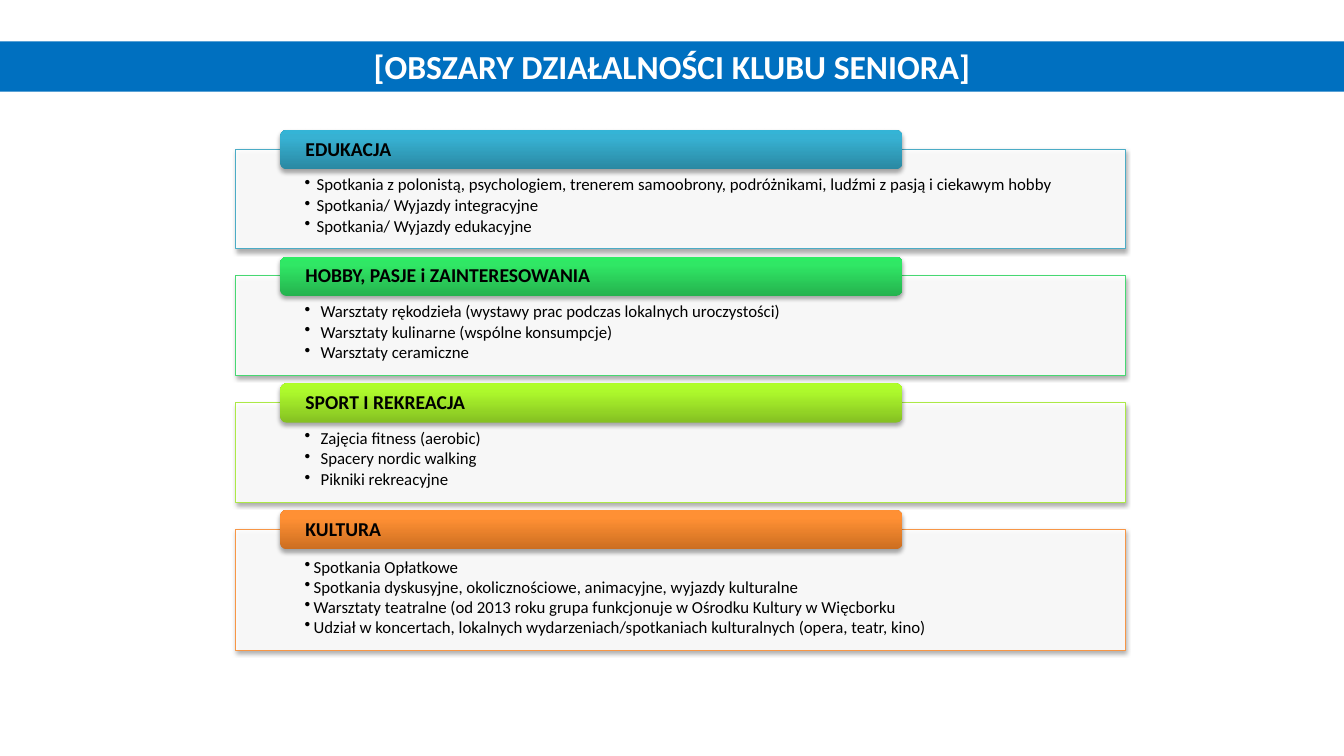
"""Build the slide that lists the areas of activity of a senior club."""
from copy import deepcopy
from dataclasses import dataclass

from lxml.etree import SubElement
from pptx import Presentation
from pptx.dml.color import RGBColor
from pptx.enum.shapes import MSO_SHAPE as Shape
from pptx.enum.text import MSO_ANCHOR as Anchor, MSO_AUTO_SIZE as AutoSize, PP_ALIGN as Align
from pptx.oxml.ns import qn
from pptx.util import Inches, Pt


@dataclass(frozen=True)
class Theme:
    font: str = "Calibri"
    band: str = "0070C0"
    white: str = "FFFFFF"
    black: str = "000000"
    title_size: int = 24
    header_size: int = 14
    body_size: int = 12


@dataclass(frozen=True)
class Area:
    name: str
    items: tuple
    border: str
    gradient: tuple
    height: float = 0.99
    indent: float = 0.16
    spacing: float = 0.9
    after: float = 1.8


AREAS = (
    Area("EDUKACJA",
         ("Spotkania z polonistą, psychologiem, trenerem samoobrony, podróżnikami, "
          "ludźmi z pasją i ciekawym hobby",
          "Spotkania/ Wyjazdy integracyjne",
          "Spotkania/ Wyjazdy edukacyjne"),
         "4BACC6", ("2A88A2", "37B1D2", "34B4D6"), indent=0.12),
    Area("HOBBY, PASJE i ZAINTERESOWANIA",
         ("Warsztaty rękodzieła (wystawy prac podczas lokalnych uroczystości)",
          "Warsztaty kulinarne (wspólne konsumpcje)",
          "Warsztaty ceramiczne"),
         "47D872", ("25B24E", "30E765", "2DEB64")),
    Area("SPORT I REKREACJA",
         ("Zajęcia fitness (aerobic)",
          "Spacery nordic walking",
          "Pikniki rekreacyjne"),
         "ACE946", ("85C022", "ADF92C", "AFFE28")),
    Area("KULTURA",
         ("Spotkania Opłatkowe",
          "Spotkania dyskusyjne, okolicznościowe, animacyjne, wyjazdy kulturalne",
          "Warsztaty teatralne (od 2013 roku grupa funkcjonuje w Ośrodku Kultury w Więcborku",
          "Udział w koncertach, lokalnych wydarzeniach/spotkaniach kulturalnych "
          "(opera, teatr, kino)"),
         "F79646", ("CC6E20", "FF9034", "FF9136"),
         height=1.2, indent=0.09, spacing=1.0, after=0),
)
FIRST_TOP, LAST_TOP = 1.48, 5.25
HEADER_RISE = 0.19


def write(paragraph, text, *, theme, size, color, bold=False, align=Align.LEFT,
          spacing=1.0, after=0, indent=None):
    if indent is not None:
        properties = paragraph._p.get_or_add_pPr()
        properties.set("marL", str(Inches(indent)))
        properties.set("indent", str(-Inches(indent)))
        SubElement(properties, qn("a:buChar"), char="•")
    paragraph.alignment = align
    paragraph.line_spacing = spacing
    paragraph.space_after = Pt(after)
    run = paragraph.add_run()
    run.text = text
    run.font.name = theme.font
    run.font.size = Pt(size)
    run.font.bold = bold
    run.font.color.rgb = RGBColor.from_string(color)


class SlideBuilder:
    def __init__(self, presentation, theme):
        self.theme = theme
        self.slide = presentation.slides.add_slide(presentation.slide_layouts[5])

    def title(self, text, left, top, width, height):
        shape = self.slide.shapes.title
        shape.left, shape.top = Inches(left), Inches(top)
        shape.width, shape.height = Inches(width), Inches(height)
        shape.fill.solid()
        shape.fill.fore_color.rgb = RGBColor.from_string(self.theme.band)
        frame = shape.text_frame
        frame.auto_size = AutoSize.NONE
        frame.vertical_anchor = Anchor.MIDDLE
        write(frame.paragraphs[0], text, theme=self.theme, size=self.theme.title_size,
              color=self.theme.white, bold=True, align=Align.CENTER)

    def box(self, kind, left, top, width, height):
        shape = self.slide.shapes.add_shape(
            kind, Inches(left), Inches(top), Inches(width), Inches(height))
        shape.shadow.inherit = False
        effects = shape._element.spPr.find(qn("a:effectLst"))
        shadow = SubElement(effects, qn("a:outerShdw"), blurRad=str(Pt(3.1)),
                            dist=str(Pt(1.8)), dir="5400000", rotWithShape="0")
        color = SubElement(shadow, qn("a:srgbClr"), val=self.theme.black)
        SubElement(color, qn("a:alpha"), val="35000")
        return shape

    def panel(self, border, left, top, width, height):
        shape = self.box(Shape.RECTANGLE, left, top, width, height)
        shape.fill.solid()
        shape.fill.fore_color.rgb = RGBColor.from_string(self.theme.white)
        color = shape._element.spPr.find(qn("a:solidFill")).find(qn("a:srgbClr"))
        SubElement(color, qn("a:alpha"), val="90000")
        shape.line.color.rgb = RGBColor.from_string(border)
        shape.line.width = Pt(0.75)

    def header(self, gradient, left, top, width, height):
        shape = self.box(Shape.ROUNDED_RECTANGLE, left, top, width, height)
        shape.line.fill.background()
        shape.fill.gradient()
        shape.fill.gradient_angle = 90
        stops = shape._element.spPr.find(qn("a:gradFill")).find(qn("a:gsLst"))
        stops.append(deepcopy(stops[0]))
        for stop, position, color in zip(shape.fill.gradient_stops, (0, 0.8, 1), gradient):
            stop.position = position
            stop.color.rgb = RGBColor.from_string(color)

    def text(self, lines, left, top, width, height, margins, anchor=Anchor.TOP, **style):
        shape = self.slide.shapes.add_textbox(
            Inches(left), Inches(top), Inches(width), Inches(height))
        frame = shape.text_frame
        frame.word_wrap = True
        frame.vertical_anchor = anchor
        side, upper, lower = margins
        frame.margin_left = frame.margin_right = Inches(side)
        frame.margin_top, frame.margin_bottom = Inches(upper), Inches(lower)
        for index, line in enumerate(lines):
            paragraph = frame.add_paragraph() if index else frame.paragraphs[0]
            write(paragraph, line, theme=self.theme, color=self.theme.black, **style)

    def area(self, area, top):
        panel = (2.34, top, 8.82, area.height)
        self.panel(area.border, *panel)
        self.text(area.items, *panel, margins=(0.68, 0.27, 0.09), size=self.theme.body_size,
                  spacing=area.spacing, after=area.after, indent=area.indent)
        header_top = top - HEADER_RISE
        self.header(area.gradient, 2.78, header_top, 6.17, 0.39)
        self.text([area.name], 2.8, header_top + 0.02, 6.14, 0.35, margins=(0.23, 0, 0),
                  anchor=Anchor.MIDDLE, size=self.theme.header_size, bold=True, spacing=0.9)


def main():
    presentation = Presentation()
    presentation.slide_width, presentation.slide_height = Inches(13.33), Inches(7.5)
    builder = SlideBuilder(presentation, Theme())
    builder.title("[OBSZARY DZIAŁALNOŚCI KLUBU SENIORA]", 0, 0.41, 13.33, 0.5)
    step = (LAST_TOP - FIRST_TOP) / (len(AREAS) - 1)
    for index, area in enumerate(AREAS):
        builder.area(area, FIRST_TOP + index * step)
    presentation.save("out.pptx")


if __name__ == "__main__":
    main()
